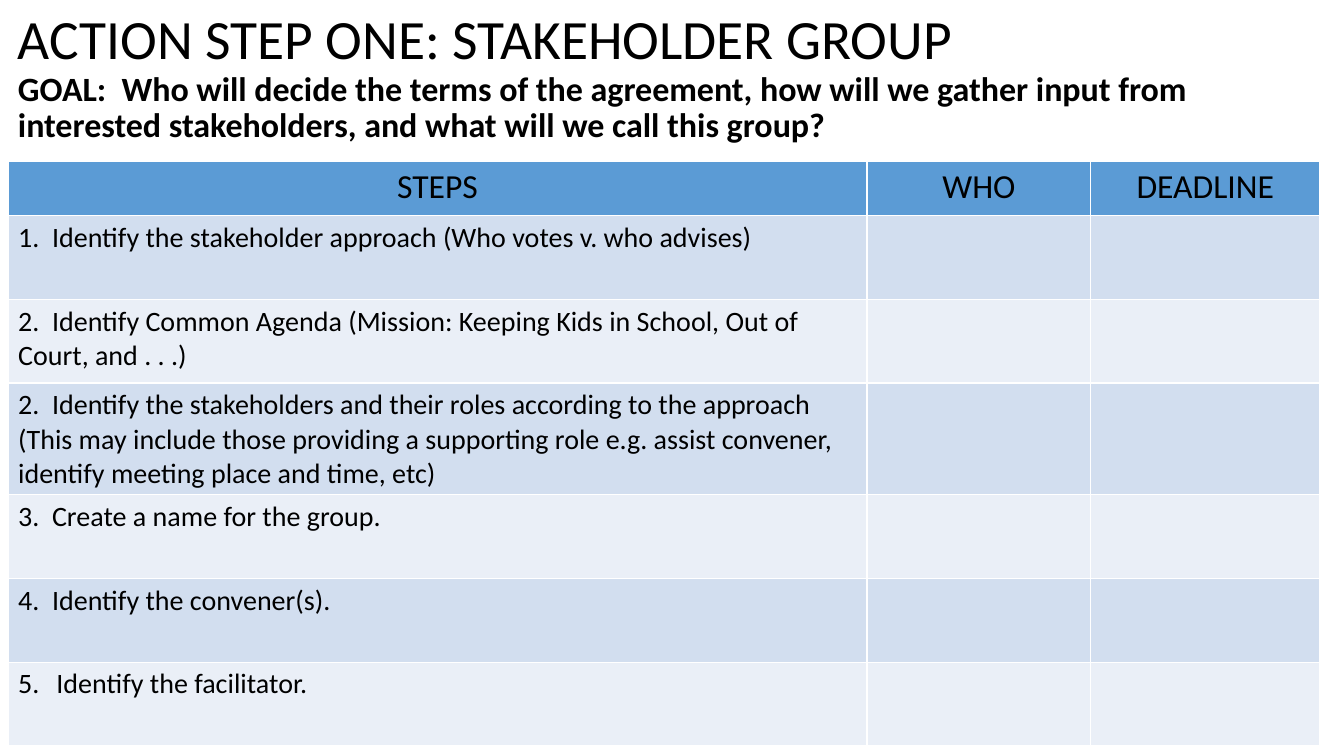
from dataclasses import dataclass
from typing import Optional

from lxml import etree
from pptx import Presentation
from pptx.dml.color import RGBColor
from pptx.enum.text import MSO_ANCHOR, PP_ALIGN
from pptx.oxml.ns import qn
from pptx.util import Inches, Pt

CENTER = PP_ALIGN.CENTER
LEFT = PP_ALIGN.LEFT
MIDDLE = MSO_ANCHOR.MIDDLE

FONT = "Calibri"
COLORS = {
    "text": "000000",
    "header": "5B9BD5",
    "odd_row": "D2DEEF",
    "even_row": "EAEFF7",
}


@dataclass
class Step:
    text: str
    height: float = 0.83
    number: Optional[int] = None


TITLE = "ACTION STEP ONE: STAKEHOLDER GROUP"
GOAL = (
    "GOAL:  Who will decide the terms of the agreement, how will we gather input "
    "from interested stakeholders, and what will we call this group?"
)
HEADINGS = ["STEPS", "WHO", "DEADLINE"]
COLUMN_WIDTHS = [8.52, 2.22, 2.27]
HEADER_HEIGHT = 0.54
STEPS = [
    Step("1.  Identify the stakeholder approach (Who votes v. who advises)"),
    Step("2.  Identify Common Agenda (Mission: Keeping Kids in School, Out of Court, and . . .)"),
    Step(
        "2.  Identify the stakeholders and their roles according to the approach "
        "(This may include those providing a supporting role e.g. assist convener, "
        "identify meeting place and time, etc)",
        height=1.11,
    ),
    Step("3.  Create a name for the group."),
    Step("4.  Identify the convener(s)."),
    Step("Identify the facilitator.", number=5),
]


def write_text(paragraph, text: str, size: float, bold: bool = False, alignment=LEFT) -> None:
    paragraph.alignment = alignment
    run = paragraph.add_run()
    run.text = text
    font_format = {"name": FONT, "size": Pt(size), "bold": bold}
    for attribute, value in font_format.items():
        setattr(run.font, attribute, value)
    run.font.color.rgb = RGBColor.from_string(COLORS["text"])


def number_paragraph(paragraph, start: int) -> None:
    """Give the paragraph an automatic number with a hanging indent."""
    properties = paragraph._p.get_or_add_pPr()
    indent = Inches(0.38)
    properties.set("marL", str(indent))
    properties.set("indent", str(-indent))
    numbering = etree.SubElement(properties, qn("a:buAutoNum"))
    numbering.set("type", "arabicPeriod")
    numbering.set("startAt", str(start))


def fill_cell(cell, color: str) -> None:
    cell.fill.solid()
    cell.fill.fore_color.rgb = RGBColor.from_string(COLORS[color])


def add_heading(slide) -> None:
    box = slide.shapes.add_textbox(Inches(0.08), Inches(0.17), Inches(13.16), Inches(1.32))
    frame = box.text_frame
    frame_format = {
        "word_wrap": True,
        "vertical_anchor": MIDDLE,
        "margin_top": 0,
        "margin_bottom": Inches(0.1),
    }
    for attribute, value in frame_format.items():
        setattr(frame, attribute, value)
    write_text(frame.paragraphs[0], TITLE, 39.6)
    write_text(frame.add_paragraph(), GOAL, 24.3, bold=True)
    for paragraph in frame.paragraphs:
        paragraph.line_spacing = 0.9


def add_steps_table(slide) -> None:
    heights = [HEADER_HEIGHT] + [step.height for step in STEPS]
    table = slide.shapes.add_table(
        len(heights), len(HEADINGS), Inches(0.08), Inches(1.6),
        Inches(sum(COLUMN_WIDTHS)), Inches(sum(heights)),
    ).table
    for column, width in zip(table.columns, COLUMN_WIDTHS):
        column.width = Inches(width)
    for row, height in zip(table.rows, heights):
        row.height = Inches(height)

    for column_index, heading in enumerate(HEADINGS):
        cell = table.cell(0, column_index)
        fill_cell(cell, "header")
        write_text(cell.text_frame.paragraphs[0], heading, 24, alignment=CENTER)

    for row_index, step in enumerate(STEPS, start=1):
        for column_index in range(len(HEADINGS)):
            fill_cell(table.cell(row_index, column_index), "odd_row" if row_index % 2 else "even_row")
        paragraph = table.cell(row_index, 0).text_frame.paragraphs[0]
        write_text(paragraph, step.text, 20)
        if step.number is not None:
            number_paragraph(paragraph, step.number)


def main() -> None:
    presentation = Presentation()
    presentation.slide_width = Inches(13.33)
    presentation.slide_height = Inches(7.5)
    slide = presentation.slides.add_slide(presentation.slide_layouts[6])
    add_heading(slide)
    add_steps_table(slide)
    presentation.save("out.pptx")


if __name__ == "__main__":
    main()
